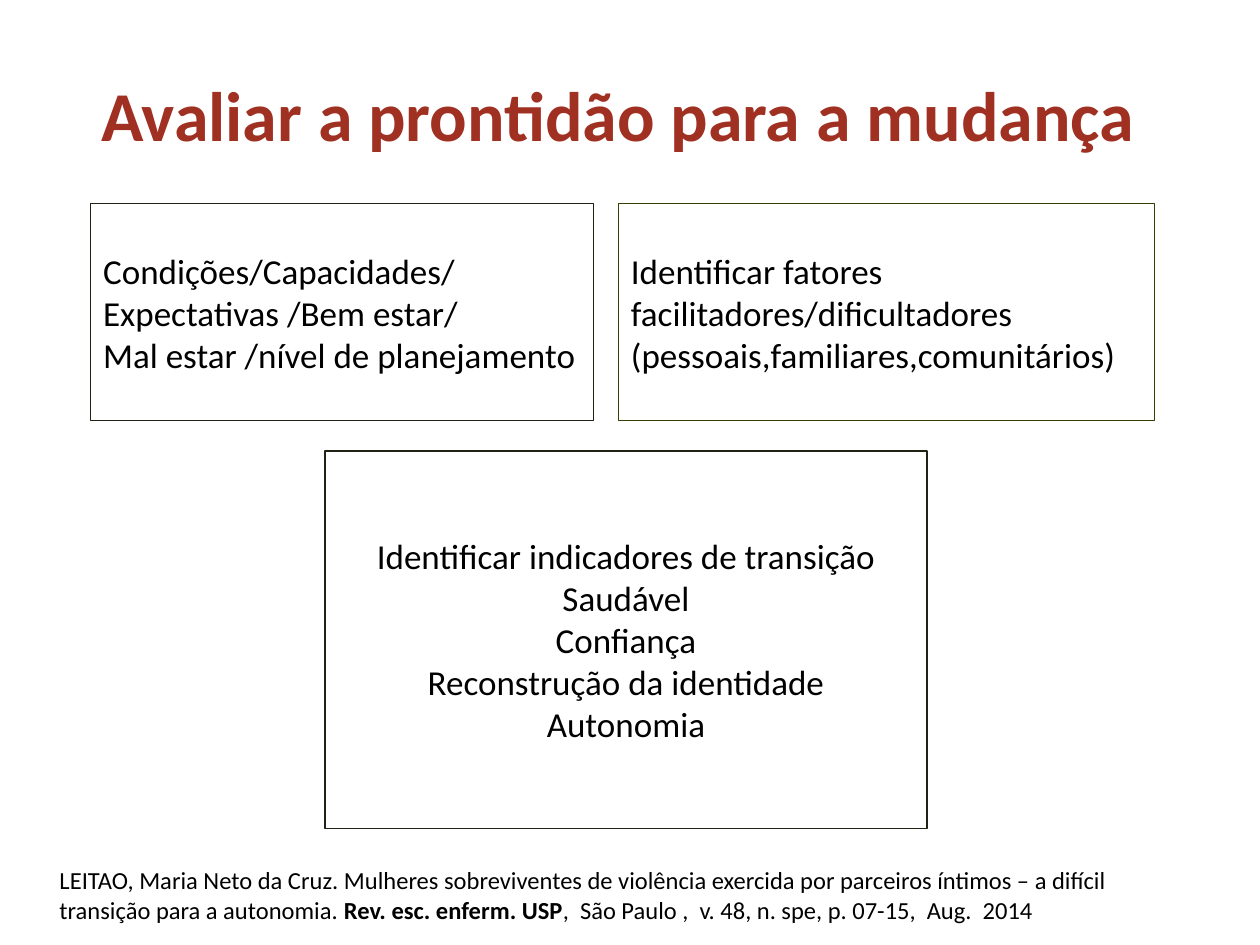
from pptx import Presentation
from pptx import util as u
from pptx.dml.color import RGBColor
from pptx.enum import shapes, text


def paint(code):
    return RGBColor.from_string(code)


class Deck:
    """Holds the text style and the current slide."""

    face = "Calibri"
    ink = "000000"

    def __init__(self, wide, high):
        self.show = Presentation()
        self.show.slide_width = u.Cm(wide)
        self.show.slide_height = u.Cm(high)
        self.slide = self.show.slides.add_slide(self.show.slide_layouts[5])

    def place(self, shape, x, y, w, h):
        shape.left, shape.top = u.Cm(x), u.Cm(y)
        shape.width, shape.height = u.Cm(w), u.Cm(h)

    def label(self, shape, paras, size, align, anchor, ink=ink):
        frame = shape.text_frame
        frame.word_wrap = True
        frame.auto_size = text.MSO_AUTO_SIZE.NONE
        frame.vertical_anchor = anchor
        for i, runs in enumerate(paras):
            para = frame.add_paragraph() if i else frame.paragraphs[0]
            para.alignment = align
            for words, bold in runs:
                run = para.add_run()
                run.text = words
                font = run.font
                font.name, font.size, font.bold = self.face, u.Pt(size), bold
                font.color.rgb = paint(ink)

    def title(self, words, spot, ink):
        shape = self.slide.shapes.title
        self.place(shape, *spot)
        self.label(shape, [[(words, True)]], 40, text.PP_ALIGN.CENTER,
                   text.MSO_ANCHOR.MIDDLE, ink)

    def box(self, lines, spot, edge, align=text.PP_ALIGN.LEFT):
        shape = self.slide.shapes.add_shape(
            shapes.MSO_SHAPE.RECTANGLE, *map(u.Cm, spot))
        shape.shadow.inherit = False
        shape.fill.background()
        shape.line.color.rgb = paint(edge)
        shape.line.width = u.Pt(0.75)
        self.label(shape, [[(line, False)] for line in lines], 20, align,
                   text.MSO_ANCHOR.MIDDLE)

    def note(self, runs, spot):
        shape = self.slide.shapes.add_textbox(*map(u.Cm, spot))
        self.label(shape, [runs], 14, text.PP_ALIGN.LEFT, text.MSO_ANCHOR.TOP)


def main():
    deck = Deck(25.4, 19.05)
    deck.title("Avaliar a prontidão para a mudança",
               (1.37, 1.3, 22.17, 1.96), "A03021")
    top, high = 4.11, 4.37
    deck.box(["Condições/Capacidades/", "Expectativas /Bem estar/",
              "Mal estar /nível de planejamento"],
             (1.83, top, 10.14, high), "1E2314")
    deck.box(["Identificar fatores facilitadores/dificultadores",
              "(pessoais,familiares,comunitários)"],
             (12.47, top, 10.8, high), "334105")
    deck.box(["Identificar indicadores de transição Saudável", "Confiança",
              "Reconstrução da identidade", "Autonomia"],
             (6.55, 9.09, 12.14, 7.62), "1E2314", text.PP_ALIGN.CENTER)
    deck.note([("LEITAO, Maria Neto da Cruz. Mulheres sobreviventes de violência "
                "exercida por parceiros íntimos – a difícil transição para a "
                "autonomia.", False),
               (" Rev. esc. enferm. USP", True),
               (",  São Paulo ,  v. 48, n. spe, p. 07-15,  Aug.  2014", False)],
              (0.95, 17.32, 23.11, 1.45))
    deck.show.save("out.pptx")


if __name__ == "__main__":
    main()
